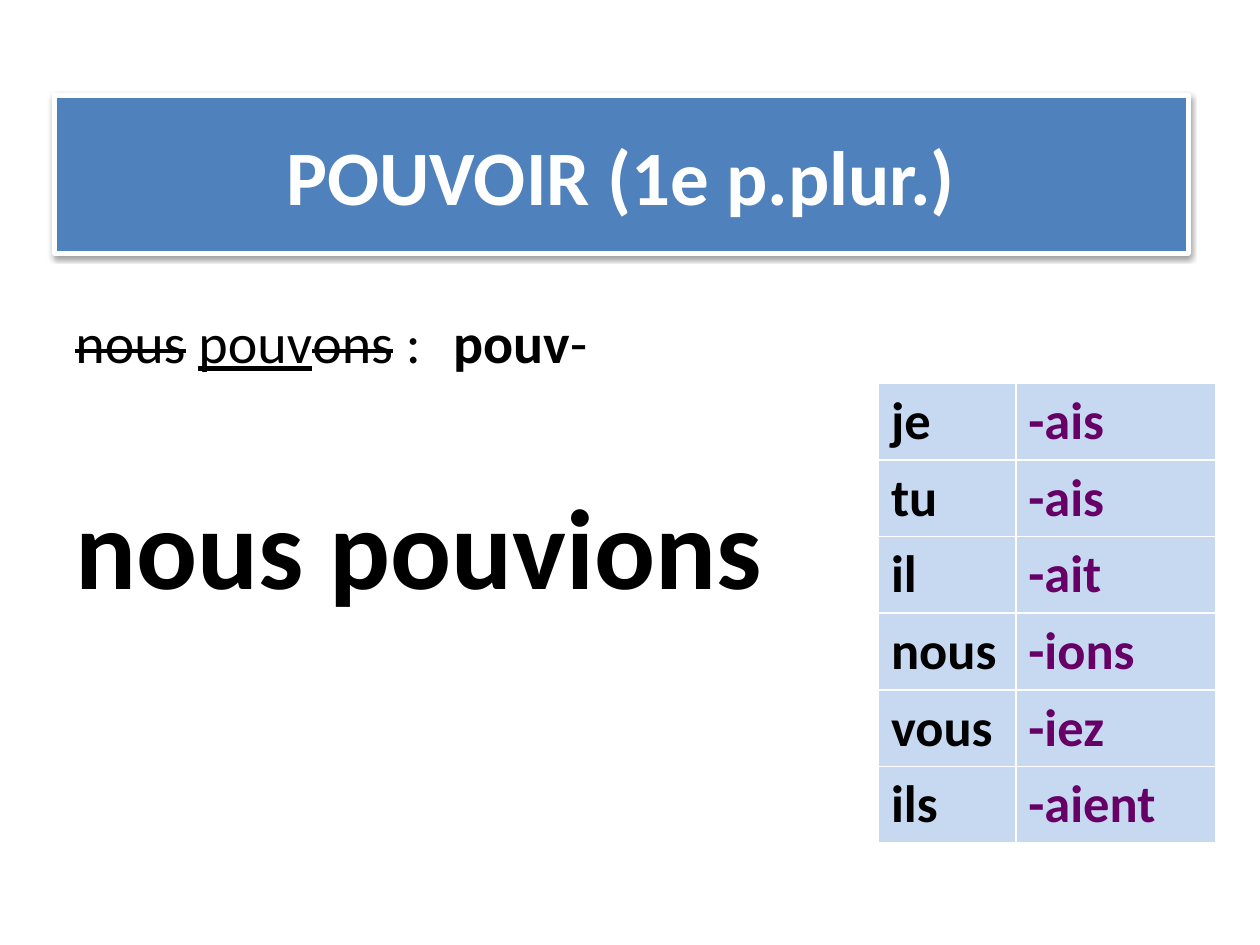
from dataclasses import dataclass

from lxml import etree
from pptx import Presentation
from pptx.dml.color import RGBColor
from pptx.enum import shapes, text
from pptx.oxml.ns import qn
from pptx.util import Pt


@dataclass(frozen=True)
class Theme:
    font: str = "Calibri"
    white: str = "FFFFFF"
    black: str = "000000"
    banner: str = "4F81BD"
    cell: str = "C6D9F1"
    ending: str = "660066"
    title_size: int = 44
    stem_size: int = 32
    answer_size: int = 65
    table_size: int = 30


theme = Theme()


def add_run(paragraph, words, size, color, bold=False, underline=False, strike=False):
    run = paragraph.add_run()
    run.text = words
    run.font.name = theme.font
    run.font.size = Pt(size)
    run.font.bold = bold
    run.font.underline = underline
    run.font.color.rgb = RGBColor.from_string(color)
    if strike:
        run.font._element.set("strike", "sngStrike")


prs = Presentation()
prs.slide_width, prs.slide_height = Pt(720), Pt(540)
slide = prs.slides.add_slide(prs.slide_layouts[6])

# Title banner with a soft shadow below
banner = slide.shapes.add_shape(
    shapes.MSO_SHAPE.RECTANGLE, Pt(31), Pt(54.7), Pt(648), Pt(90))
banner.fill.solid()
banner.fill.fore_color.rgb = RGBColor.from_string(theme.banner)
banner.line.color.rgb = RGBColor.from_string(theme.white)
banner.line.width = Pt(3)
banner.shadow.inherit = False
effects = banner._element.spPr.find(qn("a:effectLst"))
shadow = etree.SubElement(effects, qn("a:outerShdw"), blurRad=str(Pt(3.1)),
                          dist=str(Pt(1.6)), dir="5400000", rotWithShape="0")
shadow_color = etree.SubElement(shadow, qn("a:srgbClr"), val=theme.black)
etree.SubElement(shadow_color, qn("a:alpha"), val="38000")
banner.text_frame.vertical_anchor = text.MSO_ANCHOR.MIDDLE
title = banner.text_frame.paragraphs[0]
title.alignment = text.PP_ALIGN.CENTER
add_run(title, "POUVOIR (1e p.plur.)", theme.title_size, theme.white, bold=True)

# Stem derivation and the resulting form
derivation = slide.shapes.add_textbox(Pt(36), Pt(172), Pt(648), Pt(310)).text_frame
derivation.word_wrap = True
stem = derivation.paragraphs[0]
for words, style in [
    ("nous", {"strike": True}),
    (" ", {}),
    ("pouv", {"underline": True}),
    ("ons", {"strike": True}),
    (" : \t", {}),
    ("pouv", {"bold": True}),
    ("-", {}),
]:
    add_run(stem, words, theme.stem_size, theme.black, **style)
answer = derivation.add_paragraph()
answer.space_before = Pt(58)
add_run(answer, "nous pouvions", theme.answer_size, theme.black, bold=True)

# Table of imperfect endings
endings = [("je", "-ais"), ("tu", "-ais"), ("il", "-ait"),
           ("nous", "-ions"), ("vous", "-iez"), ("ils", "-aient")]
row_height = 43.8
endings_table = slide.shapes.add_table(
    len(endings), 2, Pt(502), Pt(219), Pt(193), Pt(row_height * len(endings))).table
for column, width in zip(endings_table.columns, (78.5, 114.5)):
    column.width = Pt(width)
for row, pair in enumerate(endings):
    endings_table.rows[row].height = Pt(row_height)
    for col, (words, color) in enumerate(zip(pair, (theme.black, theme.ending))):
        cell = endings_table.cell(row, col)
        cell.fill.solid()
        cell.fill.fore_color.rgb = RGBColor.from_string(theme.cell)
        add_run(cell.text_frame.paragraphs[0], words, theme.table_size, color, bold=True)

prs.save("out.pptx")
